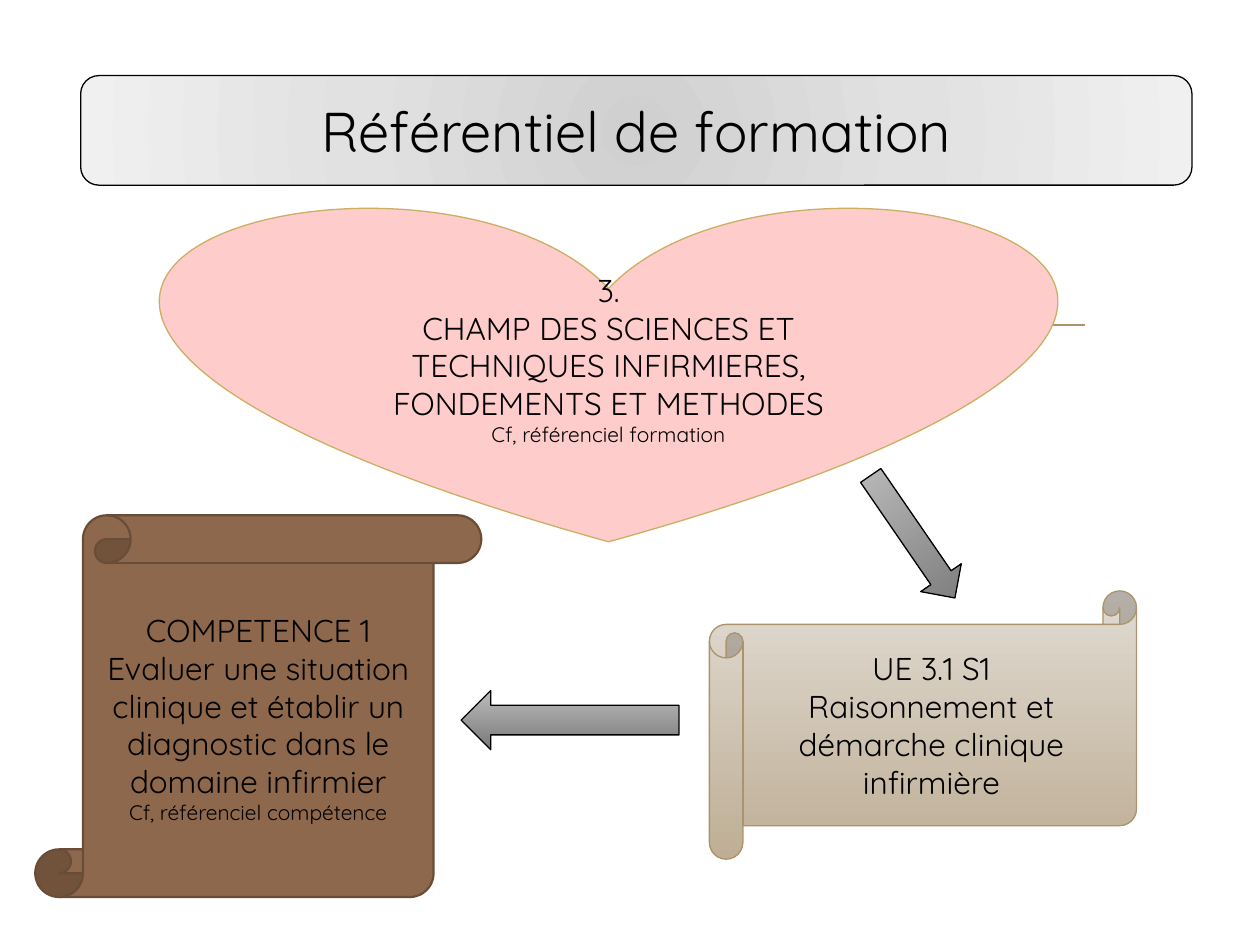
from lxml import etree
from pptx import Presentation
from pptx.dml.color import RGBColor
from pptx.enum.shapes import MSO_CONNECTOR, MSO_SHAPE
from pptx.enum.text import MSO_ANCHOR, PP_ALIGN
from pptx.oxml.ns import qn
from pptx.util import Inches, Pt

STRAIGHT = MSO_CONNECTOR.STRAIGHT
ROUNDED = MSO_SHAPE.ROUNDED_RECTANGLE
HEART = MSO_SHAPE.HEART
VERTICAL_SCROLL = MSO_SHAPE.VERTICAL_SCROLL
HORIZONTAL_SCROLL = MSO_SHAPE.HORIZONTAL_SCROLL
LEFT_ARROW = MSO_SHAPE.LEFT_ARROW
DOWN_ARROW = MSO_SHAPE.DOWN_ARROW
MIDDLE = MSO_ANCHOR.MIDDLE
CENTER = PP_ALIGN.CENTER

presentation = Presentation()
presentation.slide_width = Inches(10)
presentation.slide_height = Inches(7.5)
slide = presentation.slides.add_slide(presentation.slide_layouts[6])
column = presentation.slide_width / 100
row = presentation.slide_height / 100


def color(value):
    return RGBColor.from_string(value)


def add_panel(kind, box, fills, outline, width, lines=()):
    left, top, wide, high = box
    shape = slide.shapes.add_shape(
        kind, int(left * column), int(top * row), int(wide * column), int(high * row))
    shape.shadow.inherit = False
    if len(fills) == 1:
        shape.fill.solid()
        shape.fill.fore_color.rgb = color(fills[0])
    else:
        shape.fill.gradient()
        shape.fill.gradient_angle = 270
        for stop, value in zip(shape.fill.gradient_stops, fills):
            stop.color.rgb = color(value)
    shape.line.color.rgb = color(outline)
    shape.line.width = Pt(width)
    frame = shape.text_frame
    frame.word_wrap = True
    frame.vertical_anchor = MIDDLE
    for index, (text, size) in enumerate(lines):
        paragraph = frame.add_paragraph() if index else frame.paragraphs[0]
        paragraph.text = text
        paragraph.alignment = CENTER
        paragraph.font.size = Pt(size)
        paragraph.font.name = "Quicksand"
        paragraph.font.color.rgb = color("000000")
    return shape


rule = slide.shapes.add_connector(
    STRAIGHT, int(14 * column), int(34.4 * row), int(86.1 * column), int(34.4 * row))
rule.line.color.rgb = color("AB946B")
rule.line.width = Pt(1.25)
etree.SubElement(rule._element.spPr, qn("a:effectLst"))

title = add_panel(ROUNDED, (6.4, 8, 88.2, 11.6), ["D0D0D0", "F0F0F0"], "000000", 0.75,
                  [("Référentiel de formation", 32)])
gradient = title._element.spPr.find(qn("a:gradFill"))
middle_stop = etree.Element(qn("a:gs"), pos="50000")
etree.SubElement(middle_stop, qn("a:srgbClr"), val="E1E1E1")
gradient.find(qn("a:gsLst")).insert(1, middle_stop)
radial = etree.Element(qn("a:path"), path="circle")
etree.SubElement(radial, qn("a:fillToRect"), l="50000", t="50000", r="50000", b="50000")
gradient.replace(gradient.find(qn("a:lin")), radial)

add_panel(HEART, (12.9, 21.6, 70.8, 35.73), ["FFCCCC"], "CBAF62", 0.75, [
    ("3.", 18),
    ("CHAMP DES SCIENCES ET TECHNIQUES INFIRMIERES, FONDEMENTS ET METHODES", 18),
    ("Cf, référenciel formation", 12),
])
add_panel(VERTICAL_SCROLL, (2.8, 54.53, 35.4, 40.4), ["8E684C"], "694D38", 1.25, [
    ("COMPETENCE 1", 18),
    ("Evaluer une situation clinique et établir un diagnostic dans le domaine infirmier", 18),
    ("Cf, référenciel compétence", 12),
])
add_panel(HORIZONTAL_SCROLL, (56.3, 62.53, 33.9, 28.4), ["E1DBD2", "BEAE95"], "AB946B", 0.75, [
    ("UE 3.1 S1", 18),
    ("Raisonnement et démarche clinique infirmière", 18),
])

for kind, box, angle in [
    (LEFT_ARROW, (36.6, 73.07, 17.3, 6.27), 0),
    (DOWN_ARROW, (70.5, 48.93, 3.9, 15.73), 325.5),
]:
    arrow = add_panel(kind, box, ["BCBCBC", "797979"], "000000", 0.75)
    arrow.rotation = angle

presentation.save("out.pptx")
